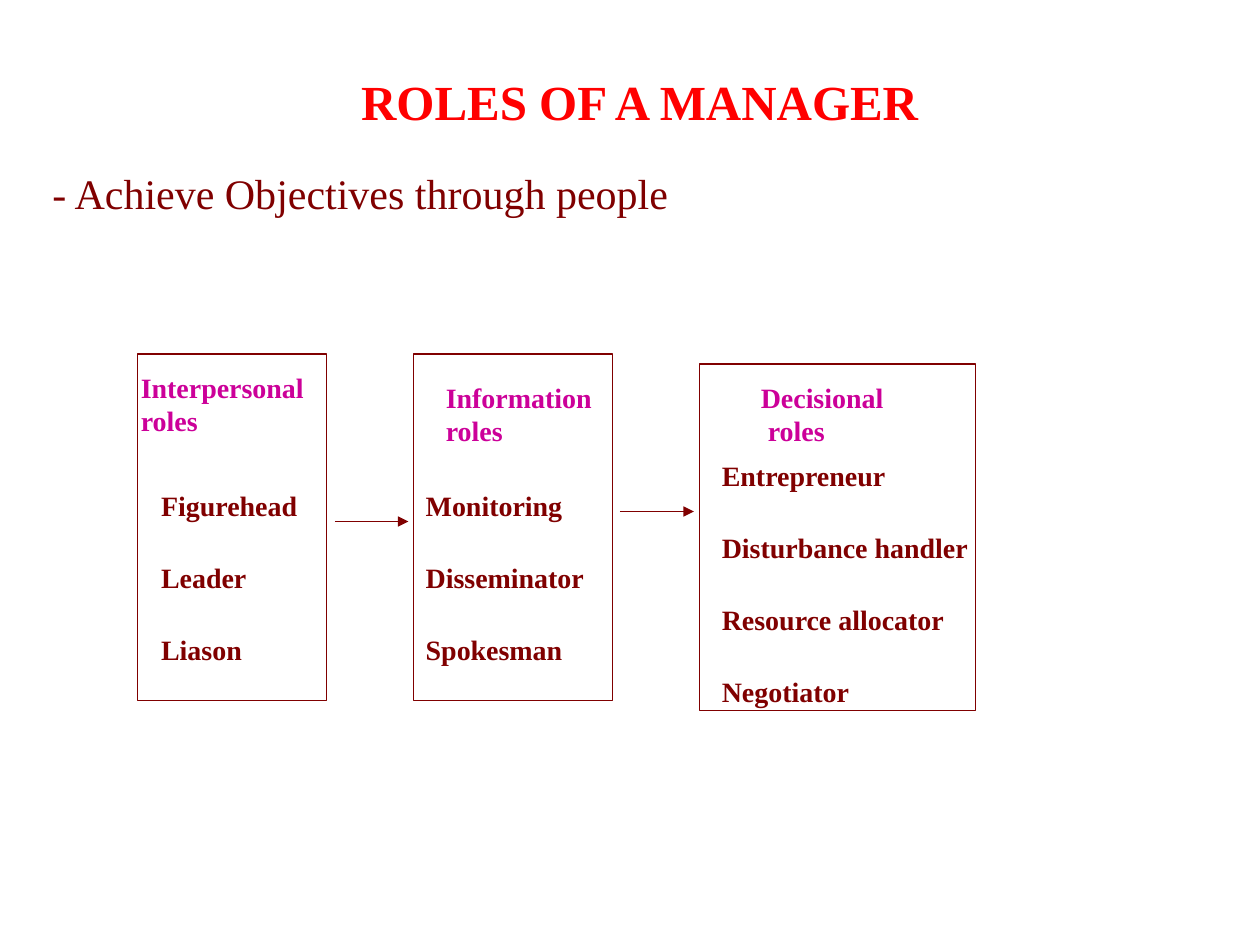
import pptx
import pptx.dml.color
import pptx.enum.shapes
import pptx.enum.text
import pptx.oxml
import pptx.oxml.ns
import pptx.util

Pt = pptx.util.Pt
FONT = "Times New Roman"
RED, MAROON, MAGENTA, WHITE = "FF0000", "800000", "CC0099", "FFFFFF"
CARD_HEIGHT = 198

# Box is left, top, width, height; offsets and widths place the text in it
CARDS = [
    {"box": (78.7, 202.3, 108, CARD_HEIGHT),
     "heading": ["Interpersonal", "roles"], "heading_at": (-5.3, 5.8, 112),
     "roles": ["Figurehead", "Leader", "Liason"], "roles_at": (6.3, 73.5, 96)},
    {"box": (236.2, 202.3, 113.8, CARD_HEIGHT),
     "heading": ["Information", "roles"], "heading_at": (11.5, 11.5, 102),
     "roles": ["Monitoring", "Disseminator", "Spokesman"],
     "roles_at": (0, 73.5, 117.4)},
    {"box": (399.6, 208, 157.7, CARD_HEIGHT),
     "heading": ["Decisional", " roles"], "heading_at": (28.1, 5.8, 96),
     "roles": ["Entrepreneur", "Disturbance handler", "Resource allocator",
               "Negotiator"],
     "roles_at": (5.8, 50.5, 174.2)},
]
# Start x, end x, y
ARROWS = [(191.4, 233.4, 298), (354.3, 396.5, 292.3)]


def color(value):
    return pptx.dml.color.RGBColor.from_string(value)


def add_text(slide, box, lines, size, value, bold=False, margins=(0, 0), gap=0,
             alignment=pptx.enum.text.PP_ALIGN.LEFT,
             anchor=pptx.enum.text.MSO_ANCHOR.TOP):
    frame = slide.shapes.add_textbox(*map(Pt, box)).text_frame
    frame.word_wrap = True
    frame.vertical_anchor = anchor
    frame.margin_left = frame.margin_right = Pt(margins[0])
    frame.margin_top = frame.margin_bottom = Pt(margins[1])
    for index, line in enumerate(lines):
        paragraph = frame.add_paragraph() if index else frame.paragraphs[0]
        paragraph.alignment = alignment
        paragraph.space_before = Pt(gap if index else 0)
        run = paragraph.add_run()
        run.text = line
        run.font.name = FONT
        run.font.size = Pt(size)
        run.font.bold = bold
        run.font.color.rgb = color(value)


def add_header(slide, box):
    left, top, width, height = box
    add_text(slide, (left + 11.5, top, width, 90), ["ROLES OF A MANAGER"],
             28, RED, bold=True, alignment=pptx.enum.text.PP_ALIGN.CENTER,
             anchor=pptx.enum.text.MSO_ANCHOR.MIDDLE)
    add_text(slide, (left, top + 83.5, width, height - 83.5),
             ["- Achieve Objectives through people"], 24, MAROON)


def add_card(slide, card):
    left, top, width, height = card["box"]
    # Frame
    shape = slide.shapes.add_shape(pptx.enum.shapes.MSO_SHAPE.RECTANGLE,
                                   *map(Pt, card["box"]))
    shape.shadow.inherit = False
    shape.fill.solid()
    shape.fill.fore_color.rgb = color(WHITE)
    shape.line.color.rgb = color(MAROON)
    shape.line.width = Pt(0.75)
    # Heading and list of roles
    for part, value, gap in (("heading", MAGENTA, 0), ("roles", MAROON, 22)):
        x, y, text_width = card[part + "_at"]
        add_text(slide, (left + x, top + y, text_width, height - y),
                 card[part], 16, value, bold=True, margins=(7.2, 3.6), gap=gap)


def add_arrow(slide, start, end, y):
    arrow = slide.shapes.add_connector(
        pptx.enum.shapes.MSO_CONNECTOR.STRAIGHT, Pt(start), Pt(y), Pt(end), Pt(y))
    arrow.line.color.rgb = color(MAROON)
    arrow.line.width = Pt(0.75)
    # Arrowhead and no shadow
    head = pptx.oxml.parse_xml(
        f'<a:tailEnd {pptx.oxml.ns.nsdecls("a")} type="triangle"/>')
    arrow.line._get_or_add_ln().append(head)
    properties = arrow._element.spPr
    properties.append(pptx.oxml.parse_xml(
        f'<a:effectLst {pptx.oxml.ns.nsdecls("a")}/>'))


def main():
    presentation = pptx.Presentation()
    presentation.slide_width = Pt(720)
    presentation.slide_height = Pt(540)
    slide = presentation.slides.add_slide(presentation.slide_layouts[6])
    add_header(slide, (30, 12.5, 648, 180))
    for card in CARDS:
        add_card(slide, card)
    for arrow in ARROWS:
        add_arrow(slide, *arrow)
    presentation.save("out.pptx")


if __name__ == "__main__":
    main()
